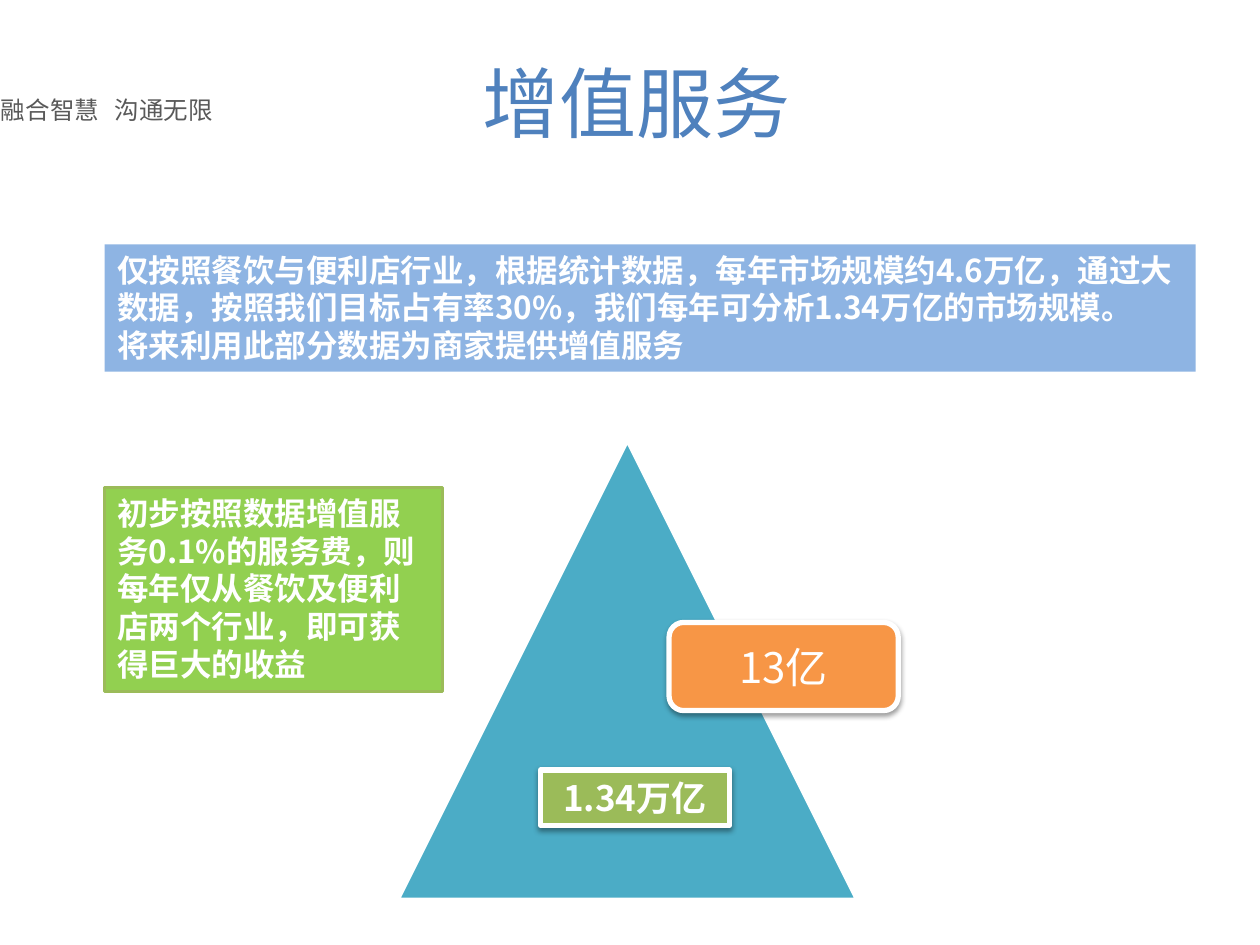
from dataclasses import dataclass, field

from lxml.etree import SubElement
from pptx import Presentation
from pptx.dml.color import RGBColor
from pptx.enum.shapes import MSO_SHAPE as Shape
from pptx.enum.text import MSO_ANCHOR as Anchor, PP_ALIGN as Align
from pptx.oxml.ns import qn
from pptx.util import Pt

COLORS = {
    "white": "FFFFFF", "gray": "595959", "title": "4F81BD",
    "band": "8EB4E3", "teal": "4BACC6", "orange": "F79646",
    "olive": "9BBB59", "lime": "92D050",
}


def rgb(name):
    return RGBColor.from_string(COLORS[name])


@dataclass
class Painter:
    page: object
    font: str = "Noto Sans CJK SC"
    line_factor: float = 1.2
    shadow: dict = field(default_factory=lambda: {"blur": 3.1, "distance": 1.6, "alpha": 38})

    def set_text(self, box, text, size, color="white", bold=False, align=Align.LEFT,
                 anchor=Anchor.TOP, font=None, tab=None):
        frame = box.text_frame
        frame.word_wrap = True
        frame.vertical_anchor = anchor
        frame.text = text
        for para in frame.paragraphs:
            para.alignment = align
            para.line_spacing = Pt(size * self.line_factor)
            if tab:
                stops = SubElement(para._p.get_or_add_pPr(), qn("a:tabLst"))
                SubElement(stops, qn("a:tab"), pos=str(Pt(tab)), algn="l")
            for span in para.runs:
                span.font.size = Pt(size)
                span.font.bold = bold
                span.font.color.rgb = rgb(color)
                span.font.name = font or self.font
                SubElement(span._r.get_or_add_rPr(), qn("a:ea"), typeface=font or self.font)

    def label(self, bounds, text, size, **style):
        box = self.page.shapes.add_textbox(*map(Pt, bounds))
        self.set_text(box, text, size, **style)

    def block(self, kind, bounds, fill, line=None, width=0, shadow=False):
        box = self.page.shapes.add_shape(kind, *map(Pt, bounds))
        box.fill.solid()
        box.fill.fore_color.rgb = rgb(fill)
        if line:
            box.line.color.rgb = rgb(line)
            box.line.width = Pt(width)
        else:
            box.line.fill.background()
        box.shadow.inherit = False
        if shadow:
            self.add_shadow(box)
        return box

    def add_shadow(self, box):
        effects = box._element.spPr.find(qn("a:effectLst"))
        outer = SubElement(effects, qn("a:outerShdw"), blurRad=str(Pt(self.shadow["blur"])),
                           dist=str(Pt(self.shadow["distance"])), dir="5400000", rotWithShape="0")
        tint = SubElement(outer, qn("a:srgbClr"), val="000000")
        SubElement(tint, qn("a:alpha"), val=str(self.shadow["alpha"] * 1000))


def main():
    deck = Presentation()
    deck.slide_width, deck.slide_height = Pt(720), Pt(540)
    painter = Painter(deck.slides.add_slide(deck.slide_layouts[6]))

    painter.label((-6.5, 51, 152, 24.5), "融合智慧\t沟通无限", 14,
                  color="gray", font="Noto Sans CJK JP", tab=65)
    painter.label((39.6, 28, 648, 90), "增值服务", 44, color="title", align=Align.CENTER)

    band = painter.block(Shape.RECTANGLE, (59.8, 139.7, 623.5, 72.7), "band")
    painter.set_text(band, "仅按照餐饮与便利店行业，根据统计数据，每年市场规模约4.6万亿，通过大数据，"
                     "按照我们目标占有率30%，我们每年可分析1.34万亿的市场规模。\n"
                     "将来利用此部分数据为商家提供增值服务", 18, bold=True)

    painter.block(Shape.ISOSCELES_TRIANGLE, (227.5, 252, 262, 262), "teal", "white", 2)

    revenue = painter.block(Shape.ROUNDED_RECTANGLE, (382.3, 355.7, 131, 50.4),
                            "orange", "white", 3, shadow=True)
    painter.set_text(revenue, "13亿", 24, align=Align.CENTER, anchor=Anchor.MIDDLE)

    market = painter.block(Shape.RECTANGLE, (308.9, 440, 108, 31.7),
                           "olive", "white", 3, shadow=True)
    painter.set_text(market, "1.34万亿", 20, bold=True, align=Align.CENTER)

    fee = painter.block(Shape.RECTANGLE, (59.8, 278.6, 193, 116.6), "lime", "olive", 2)
    painter.set_text(fee, "初步按照数据增值服务0.1%的服务费，则每年仅从餐饮及便利店两个行业，"
                     "即可获得巨大的收益", 18, bold=True)

    deck.save("out.pptx")


if __name__ == "__main__":
    main()
